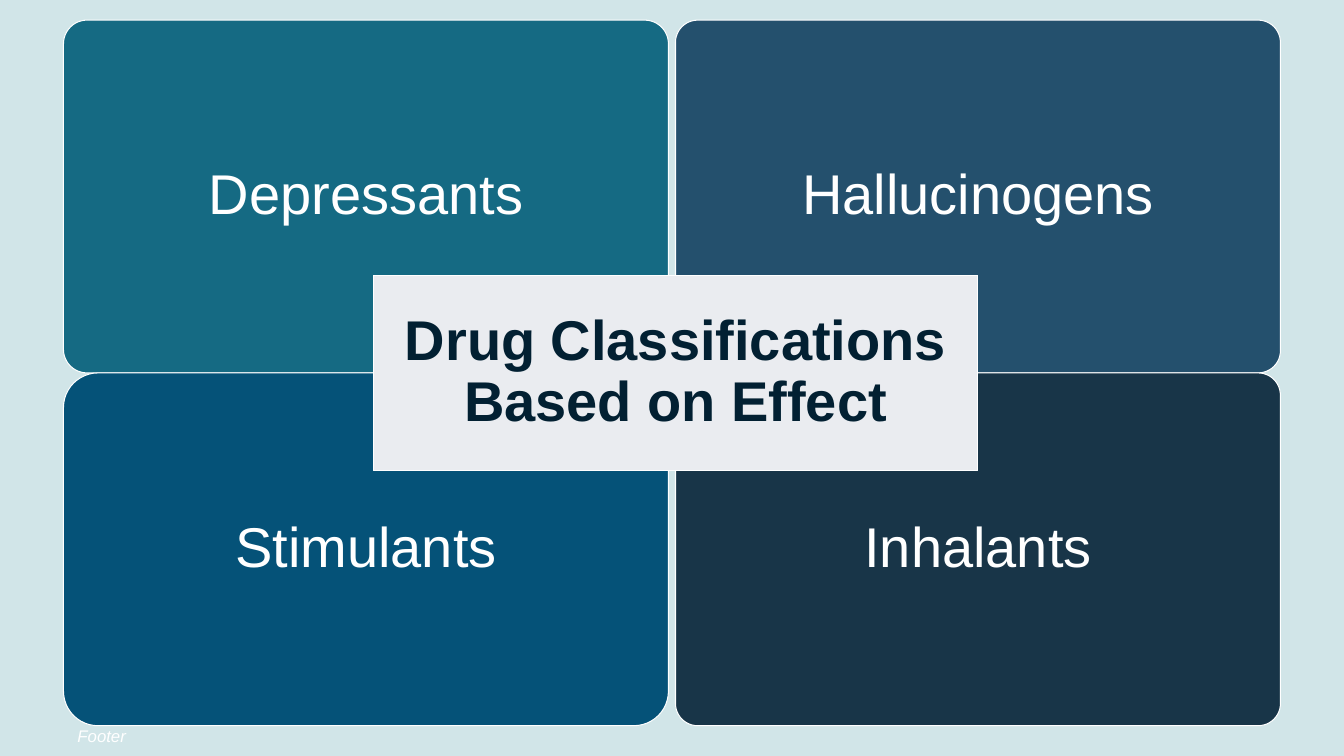
from pptx import Presentation
from pptx.dml.color import RGBColor
from pptx.enum.shapes import MSO_SHAPE
from pptx.enum.text import MSO_ANCHOR, PP_ALIGN
from pptx.util import Inches, Pt

RECTANGLE = MSO_SHAPE.RECTANGLE
ROUNDED = MSO_SHAPE.ROUNDED_RECTANGLE
MIDDLE = MSO_ANCHOR.MIDDLE
CENTER, LEFT = PP_ALIGN.CENTER, PP_ALIGN.LEFT

COLORS = {
    "background": "D1E5E8",
    "white": "FFFFFF",
    "teal": "156A83",
    "steel": "24506D",
    "blue": "055278",
    "navy": "183548",
    "panel": "EAECF0",
    "ink": "022032",
}
TITLE = "Drug Classifications Based on Effect"
FOOTER = "Footer"
# Name, fill colour and corner rounding, row by row
DRUG_CLASSES = [
    [("Depressants", "teal", 0.067), ("Hallucinogens", "steel", 0.063)],
    [("Stimulants", "blue", 0.098), ("Inhalants", "navy", 0.063)],
]

SLIDE_WIDTH, SLIDE_HEIGHT = 13.33, 7.5
GRID_LEFT, GRID_TOP = 0.63, 0.2
CARD_WIDTH, CARD_HEIGHT, COLUMN_GAP = 6, 3.5, 0.07
TITLE_BOX = (3.7, 2.73, CARD_WIDTH, 1.94)
FOOTER_BOX = (0.67, GRID_TOP + 2 * CARD_HEIGHT, 3, 0.22)


def color(name):
    return RGBColor.from_string(COLORS[name])


def write(shape, text, size, ink, align=CENTER, bold=False, italic=False):
    frame = shape.text_frame
    frame.word_wrap = True
    frame.vertical_anchor = MIDDLE
    frame.margin_left = frame.margin_right = Inches(0.1)
    frame.margin_top = frame.margin_bottom = 0
    paragraph = frame.paragraphs[0]
    paragraph.text = text
    paragraph.alignment = align
    paragraph.line_spacing = 0.9
    font = paragraph.font
    font.name, font.size = "Arial", Pt(size)
    font.bold, font.italic = bold, italic
    font.color.rgb = color(ink)


def add_panel(slide, kind, box, fill):
    shape = slide.shapes.add_shape(kind, *map(Inches, box))
    shape.shadow.inherit = False
    shape.fill.solid()
    shape.fill.fore_color.rgb = color(fill)
    shape.line.color.rgb = color("white")
    shape.line.width = Pt(0.75)
    return shape


def main():
    presentation = Presentation()
    presentation.slide_width = Inches(SLIDE_WIDTH)
    presentation.slide_height = Inches(SLIDE_HEIGHT)
    slide = presentation.slides.add_slide(presentation.slide_layouts[6])
    slide.background.fill.solid()
    slide.background.fill.fore_color.rgb = color("background")

    footer = slide.shapes.add_textbox(*map(Inches, FOOTER_BOX))
    write(footer, FOOTER, 12, "white", align=LEFT, italic=True)

    for row, drug_classes in enumerate(DRUG_CLASSES):
        for column, (name, fill, rounding) in enumerate(drug_classes):
            left = GRID_LEFT + column * (CARD_WIDTH + COLUMN_GAP)
            top = GRID_TOP + row * CARD_HEIGHT
            card = add_panel(slide, ROUNDED, (left, top, CARD_WIDTH, CARD_HEIGHT), fill)
            card.adjustments[0] = rounding
            write(card, name, 40, "white")

    title = add_panel(slide, RECTANGLE, TITLE_BOX, "panel")
    write(title, TITLE, 40, "ink", bold=True)
    presentation.save("out.pptx")


if __name__ == "__main__":
    main()
